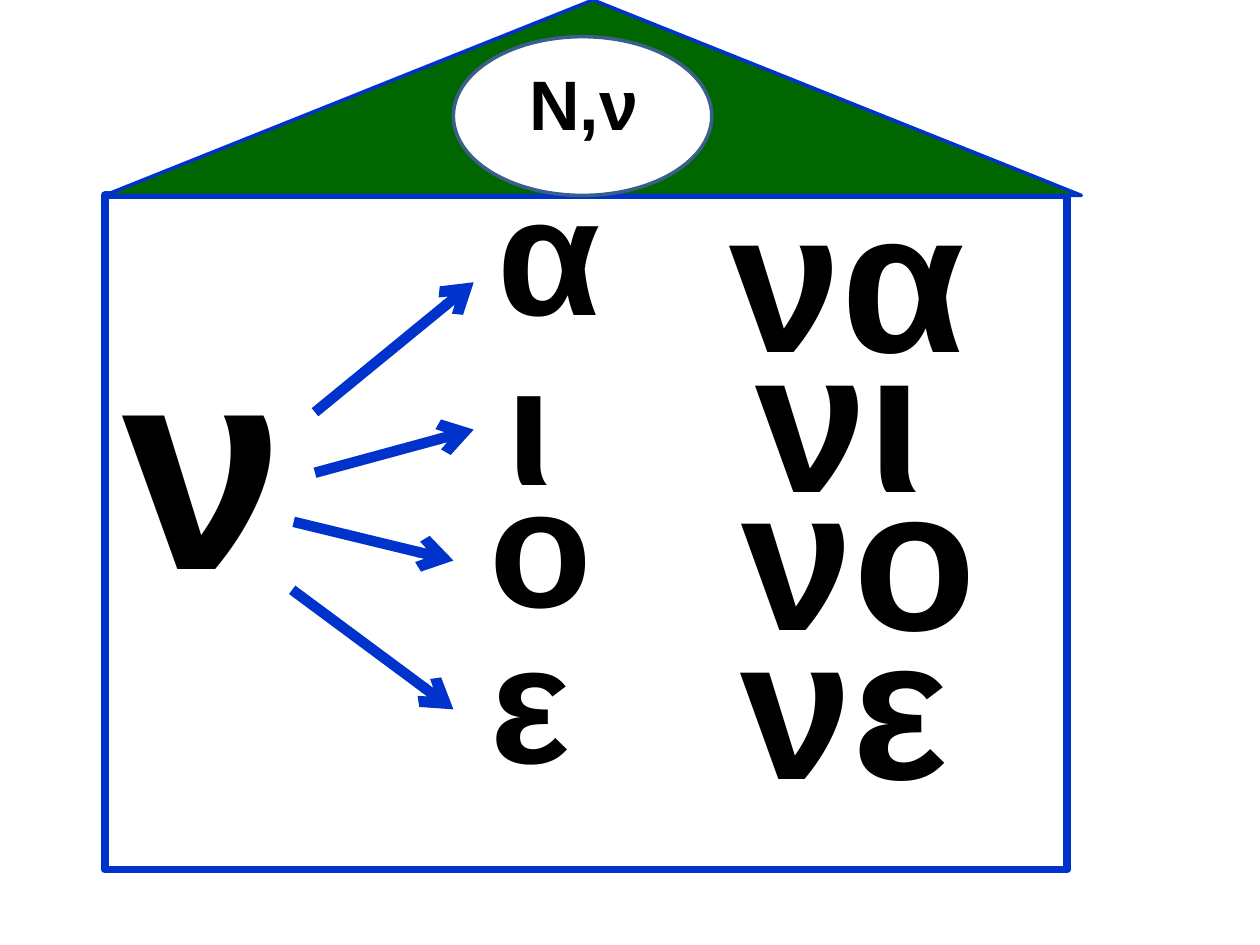
import pptx
import pptx.dml.color
import pptx.enum.shapes
import pptx.enum.text
import pptx.oxml.ns
import pptx.util
from lxml import etree

Cm = pptx.util.Cm
Pt = pptx.util.Pt
RGBColor = pptx.dml.color.RGBColor
Shape = pptx.enum.shapes.MSO_SHAPE

BLACK = RGBColor(0x00, 0x00, 0x00)
WHITE = RGBColor(0xFF, 0xFF, 0xFF)
BLUE = RGBColor(0x00, 0x33, 0xCC)
GREEN = RGBColor(0x00, 0x66, 0x00)
STEEL = RGBColor(0x3A, 0x5F, 0x8C)
NAVY = RGBColor(0x00, 0x20, 0x60)


def add_element(parent, tag, **attributes):
    return etree.SubElement(parent, pptx.oxml.ns.qn(tag), **attributes)


class HouseSlide:
    font_name = "Arial"
    arrow_width = Pt(6)
    outline_width = Pt(1.4)

    def __init__(self, presentation):
        self.slide = presentation.slides.add_slide(presentation.slide_layouts[6])

    def text(self, content, size, left, top, width, height, outlined=True):
        box = self.slide.shapes.add_textbox(Cm(left), Cm(top), Cm(width), Cm(height))
        frame = box.text_frame
        frame.word_wrap = False
        frame.auto_size = pptx.enum.text.MSO_AUTO_SIZE.SHAPE_TO_FIT_TEXT
        paragraph = frame.paragraphs[0]
        paragraph.alignment = pptx.enum.text.PP_ALIGN.CENTER
        run = paragraph.add_run()
        run.text = content
        run.font.name = self.font_name
        run.font.size = Pt(size)
        run.font.bold = True
        run.font.color.rgb = BLACK
        if outlined:
            self.outline(run)

    def outline(self, run):
        properties = run.font._element
        line = add_element(properties, "a:ln", w=str(self.outline_width))
        fill = add_element(line, "a:solidFill")
        add_element(fill, "a:srgbClr", val=str(NAVY))
        properties.insert(0, line)

    def arrow(self, start_x, start_y, end_x, end_y):
        connector = self.slide.shapes.add_connector(
            pptx.enum.shapes.MSO_CONNECTOR.STRAIGHT,
            Cm(start_x), Cm(start_y), Cm(end_x), Cm(end_y))
        connector.line.color.rgb = BLUE
        connector.line.width = self.arrow_width
        add_element(connector.line._get_or_add_ln(), "a:tailEnd", type="arrow")
        add_element(connector._element.spPr, "a:effectLst")

    def shape(self, kind, left, top, width, height, line_color, line_width, fill=None):
        shape = self.slide.shapes.add_shape(
            kind, Cm(left), Cm(top), Cm(width), Cm(height))
        shape.shadow.inherit = False
        shape.line.color.rgb = line_color
        shape.line.width = Pt(line_width)
        if fill is None:
            shape.fill.background()
        else:
            shape.fill.solid()
            shape.fill.fore_color.rgb = fill


def main():
    presentation = pptx.Presentation()
    presentation.slide_width = Cm(25.4)
    presentation.slide_height = Cm(19.05)
    house = HouseSlide(presentation)

    house.text("ν", 166, 2.06, 5.51, 4.09, 7.34)

    arrows = [
        (6.35, 8.31, 9.55, 5.69),
        (6.35, 9.53, 9.55, 8.66),
        (5.92, 10.52, 9.14, 11.3),
        (5.89, 11.89, 9.14, 14.3),
    ]
    for arrow in arrows:
        house.arrow(*arrow)

    vowels = [
        ("α", 9.58, 2.84, 2.97),
        ("ι", 9.93, 6.27, 1.5),
        ("ο", 9.55, 8.74, 2.72),
        ("ε", 9.37, 11.89, 2.64),
    ]
    for vowel, left, top, width in vowels:
        house.text(vowel, 96, left, top, width, 4.37)

    syllables = [
        ("να", 14.12, 2.92, 5.94),
        ("νι", 14.88, 5.74, 4.09),
        ("νο", 14.5, 8.53, 5.64),
        ("νε", 14.25, 11.53, 5.54),
    ]
    for syllable, left, top, width in syllables:
        house.text(syllable, 115, left, top, width, 5.18)

    house.shape(Shape.RECTANGLE, 2.11, 3.94, 19.41, 13.59, BLUE, 4.5)
    house.shape(Shape.ISOSCELES_TRIANGLE, 2.11, 0, 19.69, 3.94, BLUE, 2, GREEN)
    house.shape(Shape.OVAL, 9.14, 0.74, 5.21, 3.2, STEEL, 2, WHITE)
    house.text("Ν,ν", 40, 10.41, 1.09, 2.72, 1.96, outlined=False)

    presentation.save("out.pptx")


if __name__ == "__main__":
    main()
